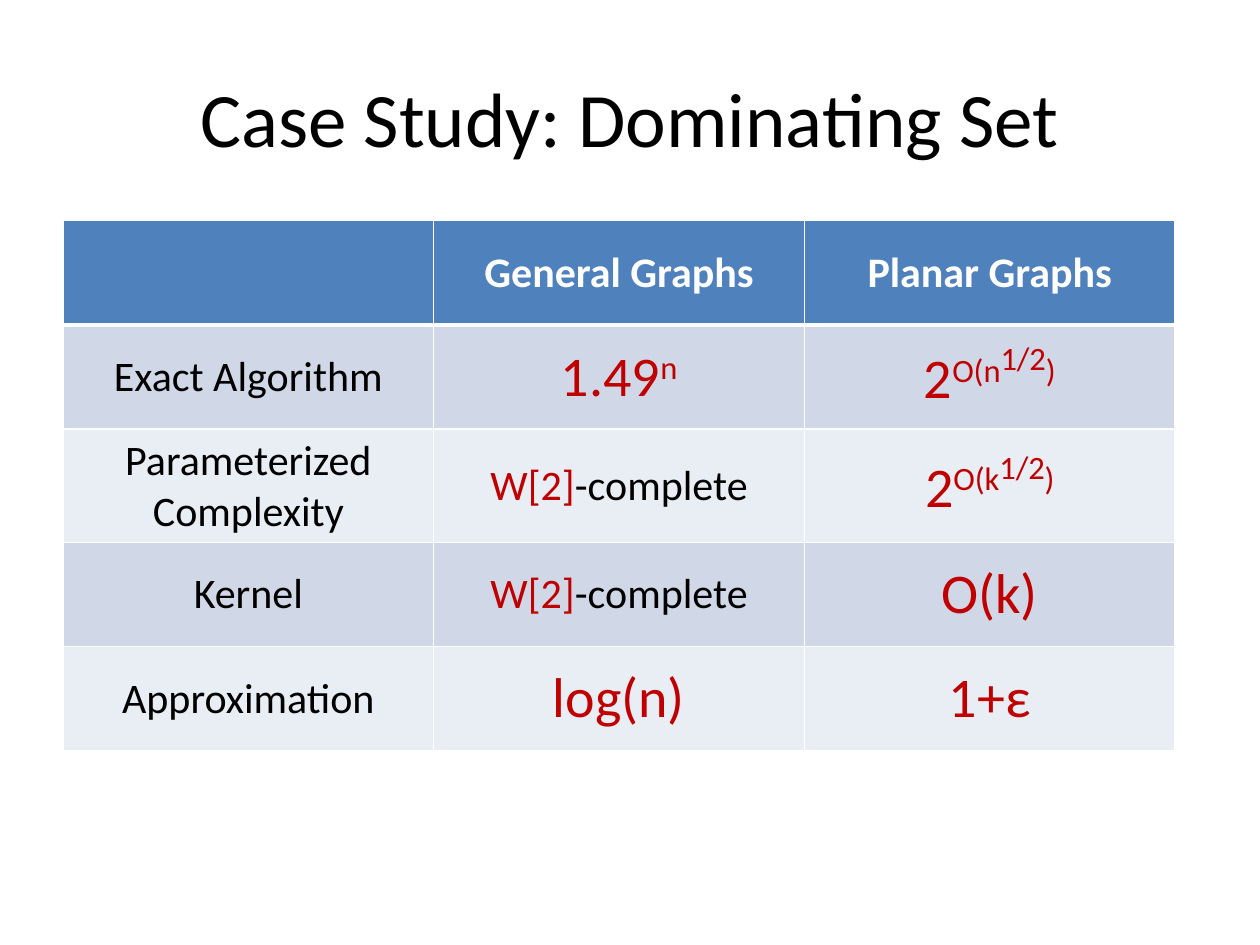
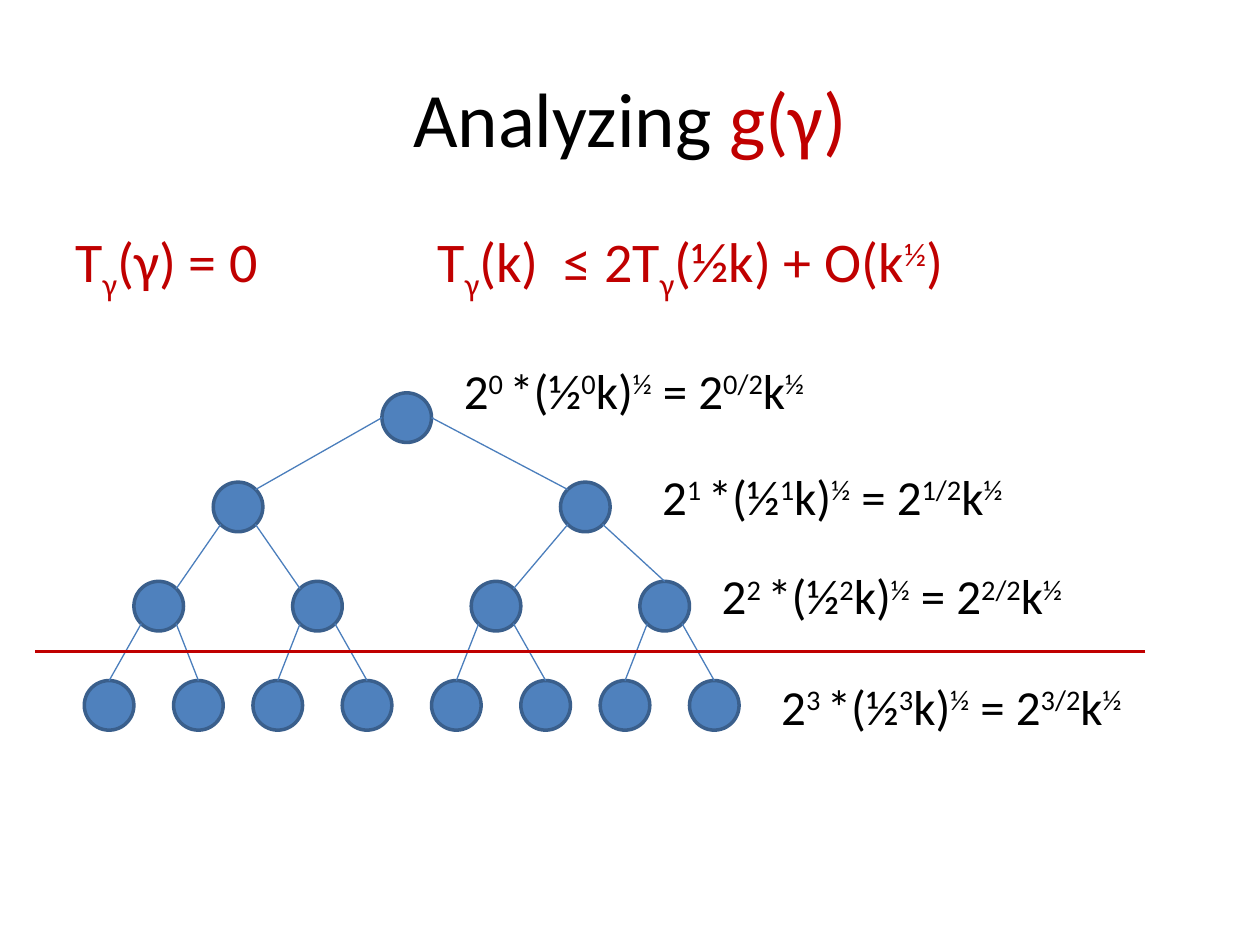
from lxml import etree
from pptx import Presentation
from pptx.dml.color import RGBColor
from pptx.enum.shapes import MSO_CONNECTOR, MSO_SHAPE
from pptx.enum.text import MSO_ANCHOR, PP_ALIGN
from pptx.oxml.ns import qn
from pptx.util import Cm, Pt

STRAIGHT = MSO_CONNECTOR.STRAIGHT
OVAL = MSO_SHAPE.OVAL
MIDDLE, TOP = MSO_ANCHOR.MIDDLE, MSO_ANCHOR.TOP
CENTER, LEFT = PP_ALIGN.CENTER, PP_ALIGN.LEFT

BLACK = RGBColor(0x00, 0x00, 0x00)
WHITE = RGBColor(0xFF, 0xFF, 0xFF)
RED = RGBColor(0xC0, 0x00, 0x00)
BLUE = RGBColor(0x4F, 0x81, 0xBD)
NODE_LINE = RGBColor(0x3A, 0x5F, 0x8C)
EDGE_LINE = RGBColor(0x4B, 0x7E, 0xBC)
BANDS = RGBColor(0xD0, 0xD8, 0xE8), RGBColor(0xE9, 0xED, 0xF4)

FONT = "Calibri"
SUB, SUP, HIGH_SUP = -25, 30, 50
NODE_SIZE = 1
DIAGONAL = 0.35

LEVEL_TOPS = [0, 1.8, 3.8, 5.8]
LEVEL_LEFTS = [
    [6],
    [2.6, 9.6],
    [1, 4.2, 7.8, 11.2],
    [0, 1.8, 3.4, 5.2, 7, 8.8, 10.4, 12.2],
]
COST_PLACES = [(9.1, 7.14), (13.1, 9.27), (14.3, 11.28), (15.5, 13.51)]


def root_power(variable):
    """Return the pieces of 2 to the O(square root of variable)."""
    return [("2",), (f"O({variable}", SUP), ("1/2", HIGH_SUP), (")", SUP)]


HARD = [("W[2]", 0, RED), ("-complete", 0, BLACK)]
COMPLEXITY = [
    ("Exact Algorithm", (32, [("1.49",), ("n", SUP)]), (32, root_power("n"))),
    ("Parameterized Complexity", (24, HARD), (32, root_power("k"))),
    ("Kernel", (24, HARD), (32, [("O(k)",)])),
    ("Approximation", (32, [("log(n)",)]), (32, [("1+ε",)])),
]


def write(tf, pieces, size, color=BLACK, align=LEFT, bold=False):
    """Write pieces of (text, baseline percent, colour) as one paragraph."""
    p = tf.paragraphs[0]
    p.alignment = align
    for text, base, piece_color in ((*piece, 0, None)[:3] if len(piece) == 1
                                    else (*piece, None)[:3] for piece in pieces):
        r = p.add_run()
        r.text = text
        r.font.name, r.font.size, r.font.bold = FONT, Pt(size), bold
        r.font.color.rgb = piece_color or color
        if base:
            r._r.get_or_add_rPr().set("baseline", str(base * 1000))
    return p


def add_text(slide, box, pieces, size, color=BLACK, align=LEFT, anchor=TOP):
    """Add a wrapped text box and return its paragraph."""
    tf = slide.shapes.add_textbox(*map(Cm, box)).text_frame
    tf.word_wrap = True
    tf.vertical_anchor = anchor
    return write(tf, pieces, size, color, align)


def add_title(slide, pieces):
    """Add the centred slide title."""
    add_text(slide, (1.27, 0.76, 22.86, 3.18), pieces, 44, align=CENTER, anchor=MIDDLE)


def add_line(shapes, start, end, color, width):
    """Add a straight line without a shadow."""
    line = shapes.add_connector(STRAIGHT, *map(Cm, (*start, *end)))
    line.line.color.rgb = color
    line.line.width = Pt(width)
    etree.SubElement(line._element.spPr, qn("a:effectLst"))
    return line


def style_cell(cell, fill, top, bottom):
    """Give a cell white borders, a fill and a middle anchor."""
    tcPr = cell._tc.get_or_add_tcPr()
    for side, width in (("L", 1), ("R", 1), ("T", top), ("B", bottom)):
        ln = etree.SubElement(tcPr, qn(f"a:ln{side}"), w=str(Pt(width)))
        paint = etree.SubElement(ln, qn("a:solidFill"))
        etree.SubElement(paint, qn("a:srgbClr"), val=str(WHITE))
    cell.fill.solid()
    cell.fill.fore_color.rgb = fill
    cell.vertical_anchor = MIDDLE


def add_complexity_table(slide, left, top, width, row_height):
    """Add the table that compares general and planar graphs."""
    rows = len(COMPLEXITY) + 1
    table = slide.shapes.add_table(rows, 3, Cm(left), Cm(top), Cm(width),
                                   Cm(row_height * rows)).table
    for column in table.columns:
        column.width = Cm(width / 3)
    for i in range(rows):
        table.rows[i].height = Cm(row_height)
        for j in range(3):
            style_cell(table.cell(i, j), BANDS[(i - 1) % 2] if i else BLUE,
                       3 if i == 1 else 1, 1 if i else 3)
    for j, heading in enumerate(("General Graphs", "Planar Graphs"), 1):
        write(table.cell(0, j).text_frame, [(heading,)], 24, WHITE, CENTER, True)
    for i, (problem, *results) in enumerate(COMPLEXITY, 1):
        write(table.cell(i, 0).text_frame, [(problem,)], 24, align=CENTER)
        for j, (size, pieces) in enumerate(results, 1):
            write(table.cell(i, j).text_frame, pieces, size, RED, CENTER)


def add_node(shapes, left, top):
    """Add one round tree node."""
    sp = shapes.add_shape(OVAL, Cm(left), Cm(top), Cm(NODE_SIZE), Cm(NODE_SIZE))
    sp.shadow.inherit = False
    sp.fill.solid()
    sp.fill.fore_color.rgb = BLUE
    sp.line.color.rgb = NODE_LINE
    sp.line.width = Pt(2)
    return sp


def add_tree(slide, left, top):
    """Add the binary recursion tree with its edges."""
    shapes = slide.shapes.add_group_shape().shapes
    levels = [[add_node(shapes, left + x, top + y) for x in lefts]
              for y, lefts in zip(LEVEL_TOPS, LEVEL_LEFTS)]
    radius = NODE_SIZE / 2
    last = len(levels) - 1
    for depth in range(1, last + 1):
        for i, child in enumerate(levels[depth]):
            parent = levels[depth - 1][i // 2]
            side = 1 if i % 2 else -1
            dx, dy = (radius, 0) if depth == 1 else (DIAGONAL, DIAGONAL)
            start = (parent.left.cm + radius + side * dx, parent.top.cm + radius + dy)
            end = (child.left.cm + radius - side * DIAGONAL,
                   child.top.cm + radius - DIAGONAL)
            edge = add_line(shapes, start, end, EDGE_LINE, 0.75)
            if depth == last or (depth, i) == (2, 3):
                edge.end_connect(child, 0)


def add_recurrence(slide, box):
    """Add the base case and the recurrence on one line."""
    pieces = [("T",), ("γ", SUB), ("(γ) = 0\t\t\tT",), ("γ", SUB), ("(k) \t≤ 2T",),
              ("γ", SUB), ("(½k) + O(k",), ("½", SUP), (")",)]
    pPr = add_text(slide, box, pieces, 32, RED)._p.get_or_add_pPr()
    pPr.set("marL", str(Cm(0.95)))
    pPr.set("indent", str(-Cm(0.95)))
    before = etree.SubElement(pPr, qn("a:spcBef"))
    etree.SubElement(before, qn("a:spcPct"), val="20000")


def add_level_cost(slide, left, top, level):
    """Add the cost of one tree level."""
    pieces = [("2",), (f"{level} ", SUP), ("*(½",), (f"{level}", SUP), ("k)",),
              ("½", SUP), (" = 2",), (f"{level}/2", SUP), ("k",), ("½", SUP)]
    add_text(slide, (left, top, 7.82, 1.45), pieces, 28)


def build_case_study(slide):
    """Build the dominating set comparison."""
    add_title(slide, [("Case Study: Dominating Set",)])
    add_complexity_table(slide, 1.27, 4.45, 22.42, 2.1)


def build_analysis(slide):
    """Build the recursion tree analysis."""
    add_title(slide, [("Analyzing ",), ("g(γ)", 0, RED)])
    add_recurrence(slide, (1.27, 4.45, 22.86, 1.68))
    add_tree(slide, 1.7, 7.92)
    for level, (left, top) in enumerate(COST_PLACES):
        add_level_cost(slide, left, top, level)
    add_line(slide.shapes, (23.09, 13.13), (0.71, 13.13), RED, 2)


def main():
    """Build and save the presentation."""
    prs = Presentation()
    prs.slide_width, prs.slide_height = Cm(25.4), Cm(19.05)
    for build in (build_case_study, build_analysis):
        build(prs.slides.add_slide(prs.slide_layouts[6]))
    prs.save("out.pptx")


if __name__ == "__main__":
    main()
